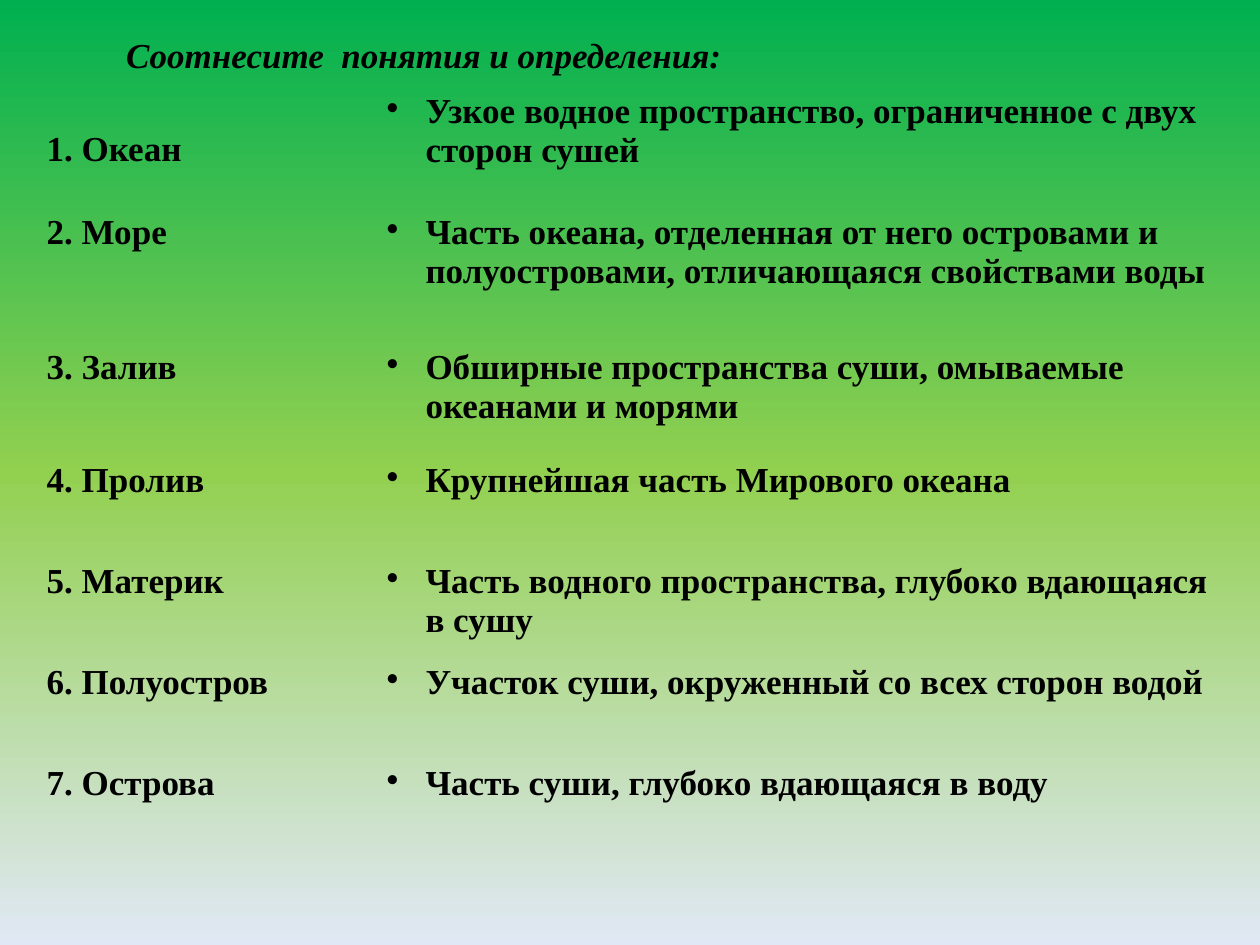
from copy import deepcopy
from dataclasses import dataclass

from lxml import etree
from pptx import Presentation
from pptx import util as u
from pptx.dml.color import RGBColor
from pptx.enum import text
from pptx.oxml.ns import qn


@dataclass(frozen=True)
class Theme:
    font: str = "Times New Roman"
    size: int = 20
    ink: str = "000000"
    gradient: tuple = ((0, "00B050"), (0.5, "92D050"), (1, "E1E8F5"))
    plain_table: str = "{2D5ABB26-0587-4C30-8999-92F81FD0307C}"


THEME = Theme()
LINE = 38  # height of one text line


def px(n):
    return u.Emu(round(n * u.Inches(10) / 1260))


def write(paragraph, words, italic=False):
    paragraph.text = words
    font = paragraph.font
    font.name, font.size = THEME.font, u.Pt(THEME.size)
    font.bold, font.italic = True, italic
    font.color.rgb = RGBColor.from_string(THEME.ink)


prs = Presentation()
prs.slide_width, prs.slide_height = px(1260), px(945)
slide = prs.slides.add_slide(prs.slide_layouts[6])

# Background: a vertical gradient with three stops
background = slide.background.fill
background.gradient()
background.gradient_angle = 270
stops = slide.background.fill._xPr.find(".//" + qn("a:gsLst"))
stops.append(deepcopy(stops[-1]))
for stop, (position, color) in zip(background.gradient_stops, THEME.gradient):
    stop.position = position
    stop.color.rgb = RGBColor.from_string(color)

# Heading
heading = slide.shapes.add_textbox(px(105), px(27), px(1102), px(54)).text_frame
heading.word_wrap = True
heading.vertical_anchor = text.MSO_ANCHOR.MIDDLE
heading.margin_left = px(21)
write(heading.paragraphs[0], "Соотнесите  понятия и определения:", italic=True)

# Terms on the left, shuffled definitions on the right
rows = [
    (121, "Океан", "Узкое водное пространство, ограниченное с двух сторон сушей"),
    (135, "Море", "Часть океана, отделенная от него островами и полуостровами, "
                  "отличающаяся свойствами воды"),
    (113, "Залив", "Обширные пространства суши, омываемые океанами и морями"),
    (101, "Пролив", "Крупнейшая часть Мирового океана"),
    (101, "Материк", "Часть водного пространства, глубоко вдающаяся в сушу"),
    (101, "Полуостров", "Участок суши, окруженный со всех сторон водой"),
    (101, "Острова", "Часть суши, глубоко вдающаяся в воду"),
]
matching = slide.shapes.add_table(
    len(rows), 2, px(34), px(86), px(1191), px(sum(row[0] for row in rows))).table
matching.first_row = matching.horz_banding = False
matching._tbl.tblPr.find(qn("a:tableStyleId")).text = THEME.plain_table
for column, width in zip(matching.columns, (340, 851)):
    column.width = px(width)

for i, (height, term, definition) in enumerate(rows):
    matching.rows[i].height = px(height)
    term_cell, definition_cell = matching.rows[i].cells
    term_cell.fill.background()
    definition_cell.fill.background()
    write(term_cell.text_frame.paragraphs[0], f"{i + 1}. {term}")
    bulleted = definition_cell.text_frame.paragraphs[0]
    write(bulleted, definition)
    props = bulleted._p.get_or_add_pPr()
    props.set("marL", str(px(39)))
    props.set("indent", str(-px(39)))
    bullet = etree.Element(qn("a:buChar"), char="•")
    props.insert(0, bullet)

# The first term sits one line lower than its definition
matching.cell(0, 0).margin_top = px(6 + LINE)

prs.save("out.pptx")
